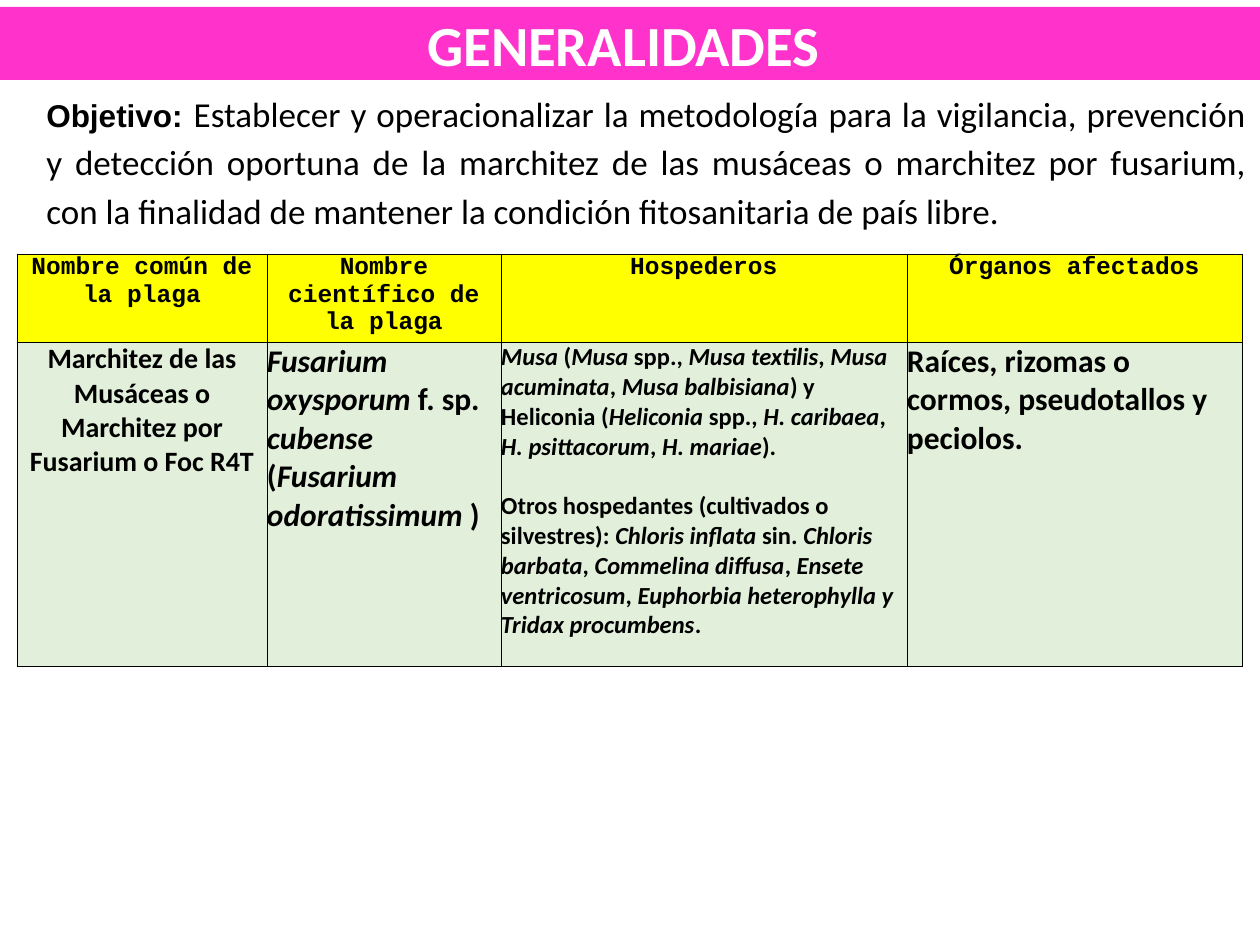
from pptx import Presentation
from pptx.dml.color import RGBColor
from pptx.enum.text import MSO_ANCHOR as ANCHOR, MSO_AUTO_SIZE as FIT, PP_ALIGN as ALIGN
from pptx.oxml import parse_xml
from pptx.oxml.ns import nsdecls
from pptx.util import Emu, Pt

PX = 914400 / 126
COLORS = {"banner": "FF33CC", "white": "FFFFFF", "black": "000000",
          "header": "FFFF00", "body": "E2EFDA"}


def px(length):
    return Emu(round(length * PX))


class SlideBuilder:
    """Holds the style and the slide being built."""

    def __init__(self, prs):
        self.slide = prs.slides.add_slide(prs.slide_layouts[5])

    def color(self, name):
        return RGBColor.from_string(COLORS[name])

    def fill(self, target, name):
        target.fill.solid()
        target.fill.fore_color.rgb = self.color(name)

    def place(self, shape, left, top, width, height):
        shape.left, shape.top = px(left), px(top)
        shape.width, shape.height = px(width), px(height)

    def style(self, run, size, font="Calibri", color="black", bold=True, italic=False):
        run.font.size, run.font.name = Pt(size), font
        run.font.bold, run.font.italic = bold, italic
        run.font.color.rgb = self.color(color)

    def title(self, text, box, size):
        banner = self.slide.shapes.title
        self.place(banner, *box)
        self.fill(banner, "banner")
        frame = banner.text_frame
        frame.text = text
        frame.auto_size = FIT.NONE
        frame.vertical_anchor = ANCHOR.MIDDLE
        frame.paragraphs[0].alignment = ALIGN.CENTER
        self.style(frame.paragraphs[0].runs[0], size, color="white")

    def labelled_text(self, label, text, box):
        frame = self.slide.shapes.add_textbox(*map(px, box)).text_frame
        frame.word_wrap = True
        paragraph = frame.paragraphs[0]
        paragraph.alignment = ALIGN.JUSTIFY
        paragraph.line_spacing = 1.15
        for part, size, font, bold in ((label, 18, "Arial", True),
                                       (text, 20, "Calibri", False)):
            run = paragraph.add_run()
            run.text = part
            self.style(run, size, font, bold=bold)

    def borders(self, cell):
        for side in ("lnL", "lnR", "lnT", "lnB"):
            cell._tc.get_or_add_tcPr().append(parse_xml(
                f'<a:{side} {nsdecls("a")} w="6350"><a:solidFill>'
                f'<a:srgbClr val="{COLORS["black"]}"/></a:solidFill></a:{side}>'))

    def cell(self, cell, paragraphs, fill, size, font="Calibri", align=ALIGN.LEFT):
        """Text between asterisks is set in italics."""
        cell.margin_left = cell.margin_right = cell.margin_top = cell.margin_bottom = 0
        self.borders(cell)
        self.fill(cell, fill)
        frame = cell.text_frame
        for number, text in enumerate(paragraphs):
            paragraph = frame.add_paragraph() if number else frame.paragraphs[0]
            paragraph.alignment = align
            if number:
                paragraph.space_before = Pt(size * 1.22)  # one line of Calibri
            for index, part in enumerate(text.split("*")):
                if part:
                    run = paragraph.add_run()
                    run.text = part
                    self.style(run, size, font, italic=index % 2 == 1)

    def table(self, left, top, widths, heights, headers, body):
        table = self.slide.shapes.add_table(
            2, len(widths), px(left), px(top), px(sum(widths)), px(sum(heights))).table
        table.first_row = table.horz_banding = False
        for row, height in zip(table.rows, heights):
            row.height = px(height)
        for i, (width, header, (paragraphs, size, align)) in enumerate(
                zip(widths, headers, body)):
            table.columns[i].width = px(width)
            self.cell(table.cell(0, i), [header], "header", 14, "Courier New", ALIGN.CENTER)
            self.cell(table.cell(1, i), paragraphs, "body", size, align=align)


def main():
    prs = Presentation()
    prs.slide_width, prs.slide_height = px(1260), px(945)
    builder = SlideBuilder(prs)

    # Title banner
    builder.title("GENERALIDADES ", (0, 7, 1260, 73), 32.4)

    # Objective
    builder.labelled_text(
        "Objetivo: ",
        "Establecer y operacionalizar la metodología para la vigilancia, prevención y "
        "detección oportuna de la marchitez de las musáceas o marchitez por fusarium, con "
        "la finalidad de mantener la condición fitosanitaria de país libre.",
        (34, 80, 1225, 156))

    # Pest table
    headers = ["Nombre común de la plaga", "Nombre científico de la plaga",
               "Hospederos", "Órganos afectados"]
    hosts = [
        "*Musa *(*Musa *spp., *Musa textilis*, *Musa acuminata*, *Musa balbisiana*) y "
        "Heliconia (*Heliconia *spp., *H. caribaea*, *H. psittacorum*, *H. mariae*).",
        "Otros hospedantes (cultivados o silvestres): *Chloris inflata* sin. "
        "*Chloris barbata*, *Commelina diffusa*, *Ensete ventricosum*, "
        "*Euphorbia heterophylla y Tridax procumbens*."]
    body = [
        (["Marchitez de las Musáceas o Marchitez por Fusarium o Foc R4T"], 16, ALIGN.CENTER),
        (["*Fusarium oxysporum* f. sp. *cubense *(*Fusarium odoratissimum* )"], 18, ALIGN.LEFT),
        (hosts, 14, ALIGN.LEFT),
        (["Raíces, rizomas o cormos, pseudotallos y peciolos."], 18, ALIGN.LEFT)]
    builder.table(17, 254, [250, 234, 406, 335], [88, 324], headers, body)

    prs.save("out.pptx")


if __name__ == "__main__":
    main()
